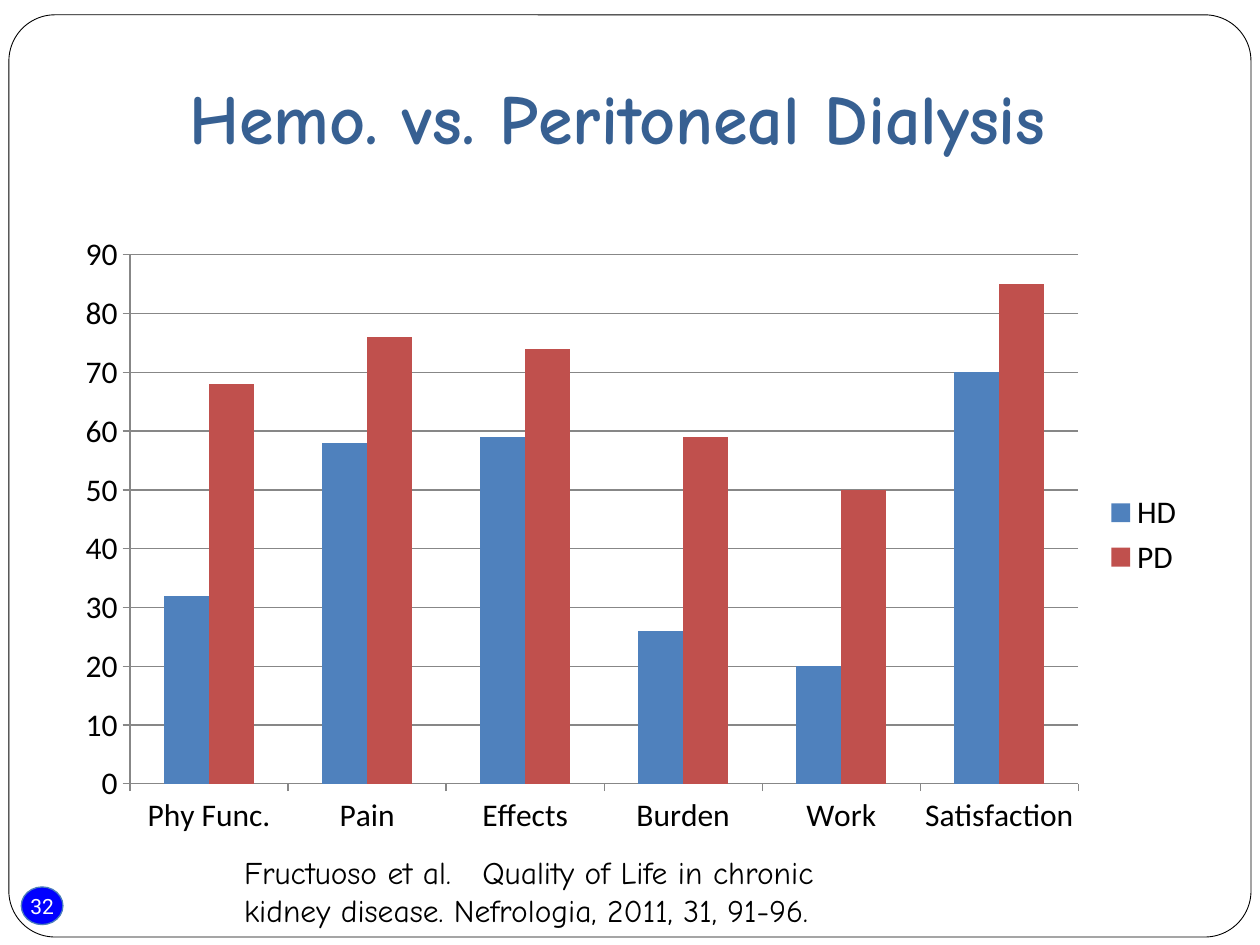
import pptx
import pptx.chart.data
import pptx.dml.color
import pptx.enum.chart
import pptx.enum.shapes
import pptx.enum.text
import pptx.util
from pptx.util import Cm, Pt

COLOURS = {
    "text": "000000",
    "title": "376092",
    "badge": "0000FF",
    "badge line": "4B7EBC",
    "badge text": "FFFFFF",
    "grid": "878787",
    "HD": "4F81BD",
    "PD": "C0504D",
}
CATEGORIES = ["Phy Func.", "Pain", "Effects", "Burden", "Work", "Satisfaction"]
SCORES = {
    "HD": [32, 58, 59, 26, 20, 70],
    "PD": [68, 76, 74, 59, 50, 85],
}


def colour(name):
    return pptx.dml.color.RGBColor.from_string(COLOURS[name])


class SlideBuilder:
    """Holds the slide's style and adds one kind of element per method."""

    text_font = "Comic Neue"
    chart_font = "Calibri"
    badge_font = "Roboto"

    def __init__(self, presentation):
        title_only = presentation.slide_layouts[5]
        self.slide = presentation.slides.add_slide(title_only)

    def format_font(self, font, name, size, colour_name, bold=False):
        font.name = name
        font.size = Pt(size)
        font.bold = bold
        font.color.rgb = colour(colour_name)

    def add_outline(self, kind, box, line_colour, line_width, fill=None):
        shape = self.slide.shapes.add_shape(kind, *map(Cm, box))
        shape.shadow.inherit = False
        shape.line.color.rgb = colour(line_colour)
        shape.line.width = Pt(line_width)
        if fill:
            shape.fill.solid()
            shape.fill.fore_color.rgb = colour(fill)
        else:
            shape.fill.background()
        return shape

    def add_frame(self, box):
        frame = self.add_outline(
            pptx.enum.shapes.MSO_SHAPE.ROUNDED_RECTANGLE, box, "text", 0.5)
        frame.adjustments[0] = 0.05

    def add_page_badge(self, number, box):
        badge = self.add_outline(
            pptx.enum.shapes.MSO_SHAPE.OVAL, box, "badge line", 0.75, "badge")
        text_frame = badge.text_frame
        text_frame.margin_left = text_frame.margin_right = 0
        text_frame.margin_top = text_frame.margin_bottom = 0
        text_frame.word_wrap = False
        text_frame.vertical_anchor = pptx.enum.text.MSO_ANCHOR.MIDDLE
        text_frame.text = number
        paragraph = text_frame.paragraphs[0]
        paragraph.alignment = pptx.enum.text.PP_ALIGN.CENTER
        self.format_font(paragraph.runs[0].font, self.badge_font, 12, "badge text")

    def set_title(self, text, box):
        title = self.slide.shapes.title
        title.left, title.top, title.width, title.height = map(Cm, box)
        title.text_frame.text = text
        title.text_frame.vertical_anchor = pptx.enum.text.MSO_ANCHOR.MIDDLE
        paragraph = title.text_frame.paragraphs[0]
        paragraph.alignment = pptx.enum.text.PP_ALIGN.CENTER
        self.format_font(paragraph.runs[0].font, self.text_font, 40, "title", True)

    def add_column_chart(self, categories, scores, box):
        data = pptx.chart.data.CategoryChartData()
        data.categories = categories
        for name, values in scores.items():
            data.add_series(name, values)
        chart = self.slide.shapes.add_chart(
            pptx.enum.chart.XL_CHART_TYPE.COLUMN_CLUSTERED,
            *map(Cm, box), data).chart
        self.format_font(chart.font, self.chart_font, 18, "text")
        chart.has_title = False
        chart.has_legend = True
        chart.legend.position = pptx.enum.chart.XL_LEGEND_POSITION.RIGHT
        chart.legend.include_in_layout = False

        plot = chart.plots[0]
        plot.gap_width = 150
        plot.overlap = 0
        plot.vary_by_categories = False
        for series in plot.series:
            series.format.fill.solid()
            series.format.fill.fore_color.rgb = colour(series.name)

        value_axis = chart.value_axis
        value_axis.minimum_scale = 0
        value_axis.maximum_scale = 90
        value_axis.major_unit = 10
        value_axis.has_major_gridlines = True
        for axis in (chart.category_axis, value_axis):
            axis.major_tick_mark = pptx.enum.chart.XL_TICK_MARK.OUTSIDE
        for part in (chart.category_axis, value_axis, value_axis.major_gridlines):
            part.format.line.color.rgb = colour("grid")
            part.format.line.width = Pt(0.75)

    def add_citation(self, text, box):
        text_box = self.slide.shapes.add_textbox(*map(Cm, box))
        text_frame = text_box.text_frame
        text_frame.word_wrap = True
        text_frame.auto_size = pptx.enum.text.MSO_AUTO_SIZE.SHAPE_TO_FIT_TEXT
        text_frame.text = text
        run = text_frame.paragraphs[0].runs[0]
        self.format_font(run.font, self.text_font, 18, "text")


def main():
    presentation = pptx.Presentation()
    presentation.slide_width = Cm(25.4)
    presentation.slide_height = Cm(19.05)

    builder = SlideBuilder(presentation)
    builder.add_page_badge("32", (0.43, 17.88, 0.84, 0.76))
    builder.add_frame((0.18, 0.3, 25.04, 18.59))
    builder.set_title("Hemo. vs. Peritoneal Dialysis ", (1.27, 0.76, 22.86, 3.18))
    builder.add_column_chart(CATEGORIES, SCORES, (1.27, 4.5, 22.86, 12.57))
    builder.add_citation(
        "Fructuoso et al.   Quality of Life in chronic kidney disease. "
        "Nefrologia, 2011, 31, 91-96.",
        (4.67, 17.07, 13.69, 1.8))

    presentation.save("out.pptx")


if __name__ == "__main__":
    main()
